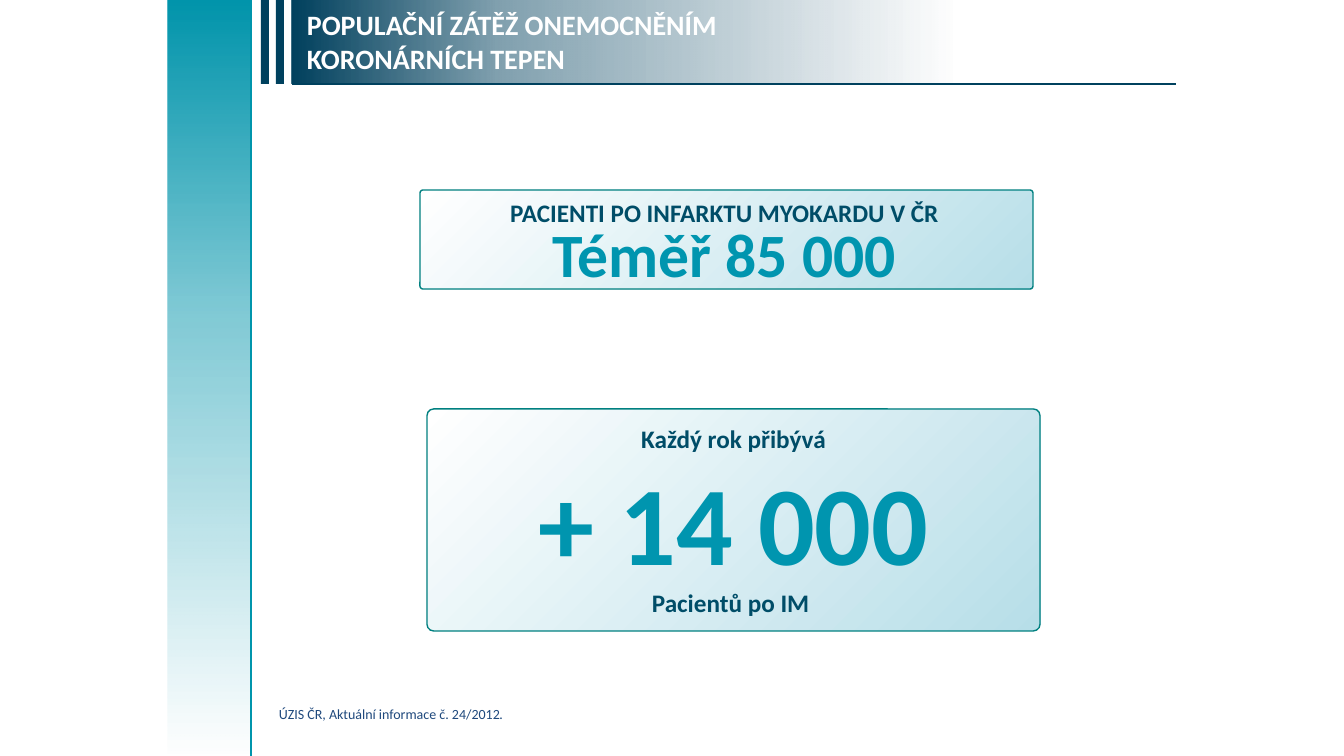
from dataclasses import dataclass

from lxml.etree import SubElement
from pptx import Presentation
from pptx.dml.color import RGBColor
from pptx.enum.shapes import MSO_CONNECTOR, MSO_SHAPE
from pptx.enum.text import MSO_ANCHOR, PP_ALIGN
from pptx.oxml.ns import qn
from pptx.util import Pt

PX = 914400 / 100.8
PAGE_WIDTH, PAGE_HEIGHT = 1344, 756


@dataclass(frozen=True)
class Theme:
    font: str = "Calibri"
    white: str = "FFFFFF"
    navy: str = "00415E"
    teal: str = "0095AC"
    label: str = "004D68"
    figure: str = "0095AF"
    card_end: str = "B7DEE8"
    card_line: str = "008080"
    source: str = "1F497D"
    title_size: int = 20
    label_size: int = 18
    total_size: int = 44
    growth_size: int = 80
    source_size: int = 10


THEME = Theme()

TITLE = "POPULAČNÍ ZÁTĚŽ ONEMOCNĚNÍM KORONÁRNÍCH TEPEN"
SOURCE = ("ÚZIS ČR, Aktuální informace č. 24/2012", ".")

# Each line: text, size, colour, exact line spacing in points (None for single)
CARDS = [
    {
        "panel": (420, 190, 613, 99),
        "text": (418, 197, 613, 99),
        "lines": [
            ("PACIENTI PO INFARKTU MYOKARDU V ČR", THEME.label_size, THEME.label, 18),
            ("Téměř 85 000", THEME.total_size, THEME.figure, 45),
        ],
    },
    {
        "panel": (427, 409, 613, 222),
        "text": (431, 418, 605, 207),
        "lines": [
            ("Každý rok přibývá", THEME.label_size, THEME.label, None),
            ("+ 14 000", THEME.growth_size, THEME.figure, None),
            ("Pacientů po IM ", THEME.label_size, THEME.label, None),
        ],
    },
]

# Gradient stops: position %, colour, opacity %
HEADER_STOPS = [(0, THEME.navy, 100), (23, THEME.navy, 50), (75, THEME.navy, 0)]
STRIP_STOPS = [(0, THEME.teal, 100), (40, THEME.teal, 51), (100, THEME.teal, 0)]
CARD_STOPS = [(0, THEME.white, 100), (100, THEME.card_end, 100)]

HEADER_LEFT, HEADER_RIGHT, HEADER_HEIGHT = 292, 1176, 84
BAR_LEFTS, BAR_WIDTH = (261, 276), 8
STRIP_LEFT, STRIP_WIDTH = 168, 84


def emu(*lengths):
    return [round(length * PX) for length in lengths]


def rgb(value):
    return RGBColor.from_string(value)


def add_panel(page, place, kind=MSO_SHAPE.RECTANGLE):
    panel = page.shapes.add_shape(kind, *emu(*place))
    panel.shadow.inherit = False
    panel.line.fill.background()
    return panel


def fill_gradient(shape, stops, clockwise_angle):
    shape.fill.gradient()
    shape.fill.gradient_angle = (360 - clockwise_angle) % 360
    stop_list = shape.element.spPr.find(".//" + qn("a:gsLst"))
    for old_stop in list(stop_list):
        stop_list.remove(old_stop)
    for position, colour, opacity in stops:
        stop = SubElement(stop_list, qn("a:gs"), pos=str(position * 1000))
        tint = SubElement(stop, qn("a:srgbClr"), val=colour)
        if opacity < 100:
            SubElement(tint, qn("a:alpha"), val=str(opacity * 1000))


def add_rule(page, start, end, colour):
    rule = page.shapes.add_connector(MSO_CONNECTOR.STRAIGHT, *emu(*start, *end))
    rule.line.color.rgb = rgb(colour)
    rule.line.width = Pt(1.25)
    SubElement(rule.element.spPr, qn("a:effectLst"))


def add_box(page, place):
    box = page.shapes.add_textbox(*emu(*place))
    box.text_frame.word_wrap = True
    return box.text_frame


def style(para, size, colour, bold=False):
    for span in para.runs:
        span.font.name = THEME.font
        span.font.size = Pt(size)
        span.font.bold = bold
        span.font.color.rgb = rgb(colour)


def add_header(page):
    for left in BAR_LEFTS:
        bar = add_panel(page, (left, 0, BAR_WIDTH, HEADER_HEIGHT))
        bar.fill.solid()
        bar.fill.fore_color.rgb = rgb(THEME.navy)
    band = add_panel(page, (HEADER_LEFT, 0, HEADER_RIGHT - HEADER_LEFT, HEADER_HEIGHT))
    fill_gradient(band, HEADER_STOPS, 0)
    add_rule(page, (HEADER_RIGHT, HEADER_HEIGHT), (HEADER_LEFT, HEADER_HEIGHT), THEME.navy)


def add_side_strip(page):
    strip = add_panel(page, (STRIP_LEFT, 0, STRIP_WIDTH, PAGE_HEIGHT))
    fill_gradient(strip, STRIP_STOPS, 90)
    edge = STRIP_LEFT + STRIP_WIDTH - 1
    add_rule(page, (edge, 0), (edge, PAGE_HEIGHT), THEME.teal)


def add_title(page):
    frame = add_box(page, (297, 3, 454, 77))
    frame.vertical_anchor = MSO_ANCHOR.MIDDLE
    frame.text = TITLE
    style(frame.paragraphs[0], THEME.title_size, THEME.white, bold=True)


def add_card(page, card):
    panel = add_panel(page, card["panel"], MSO_SHAPE.ROUNDED_RECTANGLE)
    panel.adjustments[0] = 0.03
    fill_gradient(panel, CARD_STOPS, 45)
    panel.line.color.rgb = rgb(THEME.card_line)
    panel.line.width = Pt(1)

    frame = add_box(page, card["text"])
    frame.text = "\n".join(line[0] for line in card["lines"])
    for para, (_, size, colour, spacing) in zip(frame.paragraphs, card["lines"]):
        para.alignment = PP_ALIGN.CENTER
        if spacing:
            para.line_spacing = Pt(spacing)
        style(para, size, colour, bold=True)


def add_source(page):
    para = add_box(page, (269, 701, 887, 27)).paragraphs[0]
    for piece in SOURCE:
        para.add_run().text = piece
    style(para, THEME.source_size, THEME.source)
    para.runs[-1].font.italic = True


def main():
    deck = Presentation()
    deck.slide_width, deck.slide_height = emu(PAGE_WIDTH, PAGE_HEIGHT)
    page = deck.slides.add_slide(deck.slide_layouts[6])
    add_header(page)
    add_side_strip(page)
    add_title(page)
    for card in CARDS:
        add_card(page, card)
    add_source(page)
    deck.save("out.pptx")


if __name__ == "__main__":
    main()
